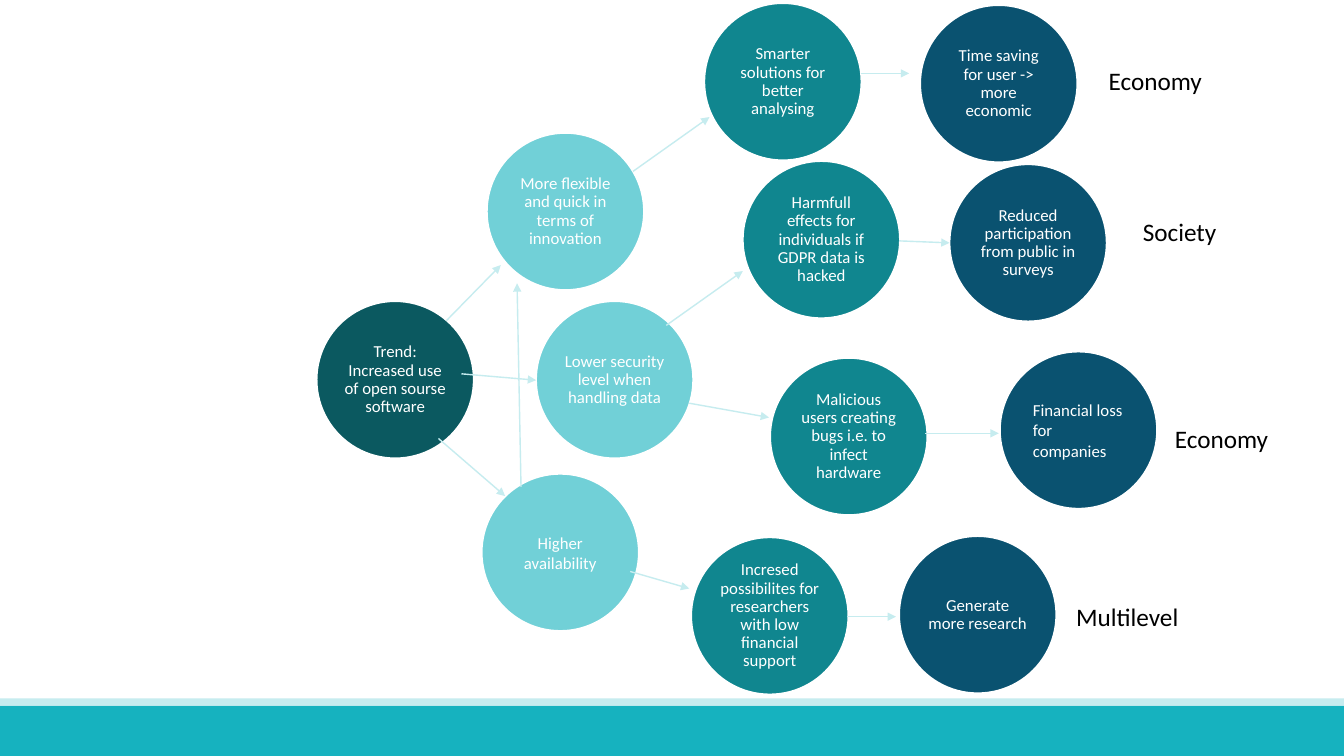
from dataclasses import dataclass

from lxml.etree import SubElement
from pptx import Presentation
from pptx.dml.color import RGBColor
from pptx.enum.shapes import MSO_CONNECTOR as Connector, MSO_SHAPE as Preset
from pptx.enum.text import MSO_ANCHOR as Anchor, PP_ALIGN as Align
from pptx.oxml.ns import qn
from pptx.slide import Slide
from pptx.text.text import TextFrame
from pptx.util import Cm, Pt

COLOURS = {
    "trend": "0B5960",
    "cause": "71D0D7",
    "effect": "10868F",
    "outcome": "0A5270",
    "arrow": "C6ECEF",
    "footer": "16B2BF",
    "white": "FFFFFF",
    "black": "000000",
}
FONT = "Calibri"
DIAMETER = 3.96


@dataclass(frozen=True)
class Bubble:
    level: str
    left: float
    top: float
    wording: str
    margin: float = 0.14
    align: Align = Align.CENTER
    spacing: float = 0.9


@dataclass(frozen=True)
class Arrow:
    x1: float
    y1: float
    x2: float
    y2: float


@dataclass(frozen=True)
class Sector:
    left: float
    top: float
    wording: str


@dataclass(frozen=True)
class Band:
    colour: str
    top: float
    height: float


BANDS = [Band("footer", 17.78, 1.27), Band("arrow", 17.6, 0.18)]

BUBBLES = [
    Bubble("trend", 7.98, 7.59, "Trend: Increased use of open sourse software", 0.03),
    Bubble("cause", 12.27, 3.35, "More flexible and quick in terms of innovation", 0.03),
    Bubble("cause", 13.51, 7.59, "Lower security level when handling data", 0.03),
    Bubble("cause", 12.14, 11.94, "Higher availability", spacing=1.0),
    Bubble("effect", 17.75, 0.08, "Smarter solutions for better analysing"),
    Bubble("effect", 18.72, 4.06, "Harmfull effects for individuals if GDPR data is hacked"),
    Bubble("effect", 19.41, 9.02, "Malicious users creating bugs i.e. to infect hardware"),
    Bubble("effect", 17.42, 13.54,
           "Incresed possibilites for researchers with low financial support"),
    Bubble("outcome", 23.19, 0.13, "Time saving for user -> more economic"),
    Bubble("outcome", 23.93, 4.14, "Reduced participation from public in surveys"),
    Bubble("outcome", 25.2, 8.86, "Financial loss for companies", 0.25, Align.LEFT, 1.0),
    Bubble("outcome", 22.66, 13.51, "Generate more research"),
]

ARROWS = [
    Arrow(11.25, 8.08, 12.62, 6.68),
    Arrow(11.63, 9.42, 13.51, 9.58),
    Arrow(11.05, 11.05, 12.73, 12.5),
    Arrow(13.13, 12.27, 13.03, 7.14),
    Arrow(15.95, 4.32, 17.88, 2.95),
    Arrow(16.79, 8.2, 18.72, 6.83),
    Arrow(17.37, 10.16, 19.38, 10.52),
    Arrow(15.88, 14.4, 17.37, 14.83),
    Arrow(21.69, 1.85, 22.91, 1.85),
    Arrow(22.66, 6.07, 23.93, 6.12),
    Arrow(23.32, 10.92, 25.17, 10.92),
    Arrow(21.34, 15.54, 22.58, 15.54),
]

SECTORS = [
    Sector(27.69, 1.52, "Economy"),
    Sector(28.55, 5.33, "Society"),
    Sector(29.36, 10.54, "Economy"),
    Sector(26.87, 15.04, "Multilevel"),
]


def colour(name: str) -> RGBColor:
    """Look up a named colour."""
    return RGBColor.from_string(COLOURS[name])


def write(frame: TextFrame, wording: str, size: int, ink: str,
          align: Align = Align.LEFT, spacing: float = 1.0) -> None:
    """Fill a frame with one formatted run."""
    frame.word_wrap = True
    paragraph = frame.paragraphs[0]
    paragraph.alignment = align
    paragraph.line_spacing = spacing
    run = paragraph.add_run()
    run.text = wording
    run.font.name = FONT
    run.font.size = Pt(size)
    run.font.color.rgb = colour(ink)


def draw_band(slide: Slide, band: Band, width: int) -> None:
    """Draw a footer stripe across the slide."""
    stripe = slide.shapes.add_shape(Preset.RECTANGLE, 0, Cm(band.top), width, Cm(band.height))
    stripe.shadow.inherit = False
    stripe.fill.solid()
    stripe.fill.fore_color.rgb = colour(band.colour)
    stripe.line.fill.background()


def draw_bubble(slide: Slide, bubble: Bubble) -> None:
    """Draw one circle of the trend map with its text."""
    circle = slide.shapes.add_shape(
        Preset.OVAL, Cm(bubble.left), Cm(bubble.top), Cm(DIAMETER), Cm(DIAMETER))
    circle.shadow.inherit = False
    circle.fill.solid()
    circle.fill.fore_color.rgb = colour(bubble.level)
    circle.line.color.rgb = colour("white")
    circle.line.width = Pt(1.25)
    frame = circle.text_frame
    frame.vertical_anchor = Anchor.MIDDLE
    frame.margin_left = frame.margin_right = Cm(bubble.margin)
    frame.margin_top = frame.margin_bottom = 0
    write(frame, bubble.wording, 12, "white", bubble.align, bubble.spacing)


def draw_arrow(slide: Slide, arrow: Arrow) -> None:
    """Draw a thin arrow between two circles."""
    link = slide.shapes.add_connector(
        Connector.STRAIGHT, Cm(arrow.x1), Cm(arrow.y1), Cm(arrow.x2), Cm(arrow.y2))
    link.line.color.rgb = colour("arrow")
    link.line.width = Pt(1)
    SubElement(link.line._get_or_add_ln(), qn("a:tailEnd"), type="triangle")
    SubElement(link._element.spPr, qn("a:effectLst"))


def draw_sector(slide: Slide, sector: Sector) -> None:
    """Write the sector beside its outcome."""
    label = slide.shapes.add_textbox(Cm(sector.left), Cm(sector.top), Cm(3.68), Cm(1.02))
    write(label.text_frame, sector.wording, 18, "black")


def main() -> None:
    """Build the trend map and save it."""
    deck = Presentation()
    deck.slide_width, deck.slide_height = Cm(33.87), Cm(19.05)
    slide = deck.slides.add_slide(deck.slide_layouts[6])
    for band in BANDS:
        draw_band(slide, band, deck.slide_width)
    for bubble in BUBBLES:
        draw_bubble(slide, bubble)
    for arrow in ARROWS:
        draw_arrow(slide, arrow)
    for sector in SECTORS:
        draw_sector(slide, sector)
    deck.save("out.pptx")


if __name__ == "__main__":
    main()
